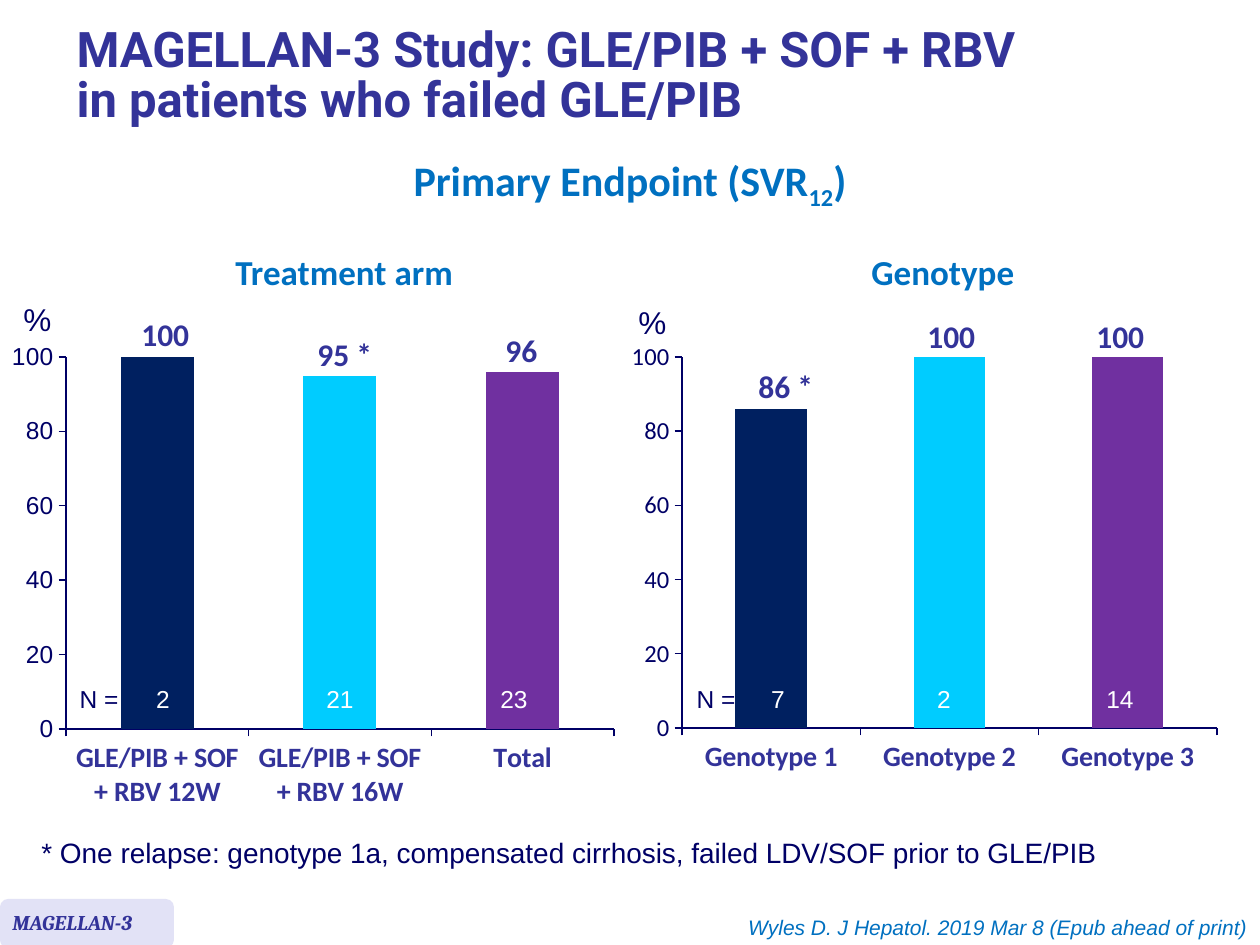
from lxml import etree
from pptx import Presentation
from pptx.chart.data import CategoryChartData
from pptx.dml.color import RGBColor
from pptx.enum.chart import XL_CHART_TYPE, XL_TICK_MARK
from pptx.enum.shapes import MSO_SHAPE
from pptx.enum.text import MSO_ANCHOR, PP_ALIGN
from pptx.oxml.ns import qn
from pptx.util import Emu, Pt

COLUMN = XL_CHART_TYPE.COLUMN_CLUSTERED
OUT, NONE = XL_TICK_MARK.OUTSIDE, XL_TICK_MARK.NONE
ROUND = MSO_SHAPE.ROUNDED_RECTANGLE
LEFT, MID, RIGHT = PP_ALIGN.LEFT, PP_ALIGN.CENTER, PP_ALIGN.RIGHT

INDIGO = RGBColor(0x33, 0x33, 0x99)
NAVY = RGBColor(0x00, 0x00, 0x66)
BLUE = RGBColor(0x00, 0x70, 0xC0)
LILAC = RGBColor(0xE2, 0xE2, 0xF6)
WHITE = RGBColor(0xFF, 0xFF, 0xFF)
BARS = (RGBColor(0x00, 0x20, 0x60), RGBColor(0x00, 0xCC, 0xFF),
        RGBColor(0x70, 0x30, 0xA0))


def px(n):
    return Emu(round(n * 914400 / 126))


def style(font, name, size, color, bold=False, italic=False):
    font.name, font.size = name, Pt(size)
    font.bold, font.italic = bold, italic
    font.color.rgb = color


def add_text(slide, box, text, name, size, color, align=LEFT, wrap=False, **look):
    frame = slide.shapes.add_textbox(*map(px, box)).text_frame
    frame.word_wrap = wrap
    para = frame.paragraphs[0]
    para.text, para.alignment = text, align
    style(para.font, name, size, color, **look)
    return para


def add_title(slide, text):
    title = slide.shapes.title
    title.left, title.top, title.width, title.height = map(px, (64, 10, 1150, 135))
    frame = title.text_frame
    frame.text, frame.vertical_anchor = text, MSO_ANCHOR.MIDDLE
    para = frame.paragraphs[0]
    para.alignment, para.line_spacing = LEFT, 0.85
    style(para.font, "Roboto", 28, INDIGO, bold=True)


def add_tag(slide, text):
    tag = slide.shapes.add_shape(ROUND, *map(px, (0, 899, 174, 49)))
    tag.shadow.inherit = False
    tag.fill.solid()
    tag.fill.fore_color.rgb = LILAC
    tag.line.fill.background()
    add_text(slide, (0, 903, 174, 38), text, "Cambria", 12, INDIGO,
             wrap=True, bold=True, italic=True)


def set_plot(chart, box, plot):
    """Fix the inner plot area, both boxes being given in slide px."""
    area = chart._chartSpace.chart.plotArea
    for old in area.findall(qn("c:layout")):
        area.remove(old)
    layout = etree.Element(qn("c:layout"))
    area.insert(0, layout)
    manual = etree.SubElement(layout, qn("c:manualLayout"))
    left, top, wide, high = box
    parts = (("layoutTarget", "inner"), ("xMode", "edge"), ("yMode", "edge"),
             ("x", (plot[0] - left) / wide), ("y", (plot[1] - top) / high),
             ("w", plot[2] / wide), ("h", plot[3] / high))
    for tag, val in parts:
        etree.SubElement(manual, qn("c:" + tag)).set("val", str(val))


def add_bars(slide, box, plot, cats, vals, face):
    data = CategoryChartData()
    data.categories = cats
    data.add_series("Series 1", vals)
    chart = slide.shapes.add_chart(COLUMN, *map(px, box), data).chart
    chart.has_legend = chart.has_title = False
    chart.font.name, chart.font.size = "Calibri", Pt(18)
    bars = chart.plots[0]
    bars.gap_width, bars.vary_by_categories = 150, False
    for i, color in enumerate(BARS):
        fill = bars.series[0].points[i].format.fill
        fill.solid()
        fill.fore_color.rgb = color
    for axis in (chart.category_axis, chart.value_axis):
        axis.has_major_gridlines = False
        axis.major_tick_mark, axis.minor_tick_mark = OUT, NONE
        axis.format.line.color.rgb = NAVY
        axis.format.line.width = Pt(0.75)
    style(chart.category_axis.tick_labels.font, "Calibri", 16, INDIGO, bold=True)
    scale = chart.value_axis
    style(scale.tick_labels.font, face, 14, NAVY)
    scale.minimum_scale, scale.maximum_scale, scale.major_unit = 0, 100, 20
    set_plot(chart, box, plot)


def add_panel(slide, head, box, plot, cats, vals, face, unit, base, marks, counts):
    """One chart with its heading, unit, bar labels and patient counts."""
    text, left, wide = head
    add_text(slide, (left, 244, wide, 55), text, "Calibri", 20, BLUE, bold=True)
    add_bars(slide, box, plot, cats, vals, face)
    add_text(slide, (*unit, 54, 50), "%", "Arial", 18, NAVY)
    add_text(slide, (base, 678, 64, 43), "N =", "Arial", 14, NAVY, MID)
    for text, left, top, wide in marks:
        add_text(slide, (left, top, wide, 50), text, "Calibri", 18, INDIGO, bold=True)
    for text, mid in counts:
        add_text(slide, (mid - 36, 678, 72, 43), text, "Arial", 14, WHITE, MID)


def main():
    deck = Presentation()
    deck.slide_width, deck.slide_height = px(1260), px(945)
    slide = deck.slides.add_slide(deck.slide_layouts[5])
    add_title(slide, "MAGELLAN-3 Study: GLE/PIB + SOF + RBV\vin patients who failed GLE/PIB")

    para = add_text(slide, (15, 179, 1230, 44), "", "Calibri", 24, BLUE, MID,
                    wrap=True, bold=True)
    para.line_spacing = Pt(15.2)
    for text in ("Primary Endpoint (SVR", "12", ")"):
        run = para.add_run()
        run.text = text
        style(run.font, "Calibri", 24, BLUE, bold=True)
    para.runs[1].font._element.set("baseline", "-25000")

    add_panel(slide, ("Treatment arm", 223, 244), (0, 333, 626, 486),
              (66, 357, 548, 372),
              ("GLE/PIB + SOF + RBV 12W", "GLE/PIB + SOF + RBV 16W", "Total"),
              (100, 95, 96), "Arial", (11, 294), 67,
              (("100", 129, 309, 74), ("95 *", 305, 329, 81), ("96", 493, 325, 58)),
              (("2", 163), ("21", 340), ("23", 514)))
    add_panel(slide, ("Genotype", 859, 170), (620, 333, 609, 451),
              (682, 357, 535, 371),
              ("Genotype 1", "Genotype 2", "Genotype 3"),
              (86, 100, 100), "Calibri", (626, 297), 684,
              (("86 *", 746, 361, 81), ("100", 915, 311, 74), ("100", 1084, 311, 74)),
              (("7", 778), ("2", 944), ("14", 1120)))

    add_text(slide, (29, 829, 1102, 47),
             "* One relapse: genotype 1a, compensated cirrhosis, "
             "failed LDV/SOF prior to GLE/PIB", "Arial", 16, NAVY)
    add_tag(slide, "MAGELLAN-3")
    add_text(slide, (333, 908, 927, 38),
             "Wyles D. J Hepatol. 2019 Mar 8 (Epub ahead of print)",
             "Arial", 12, BLUE, RIGHT, wrap=True, italic=True)
    deck.save("out.pptx")


if __name__ == "__main__":
    main()
